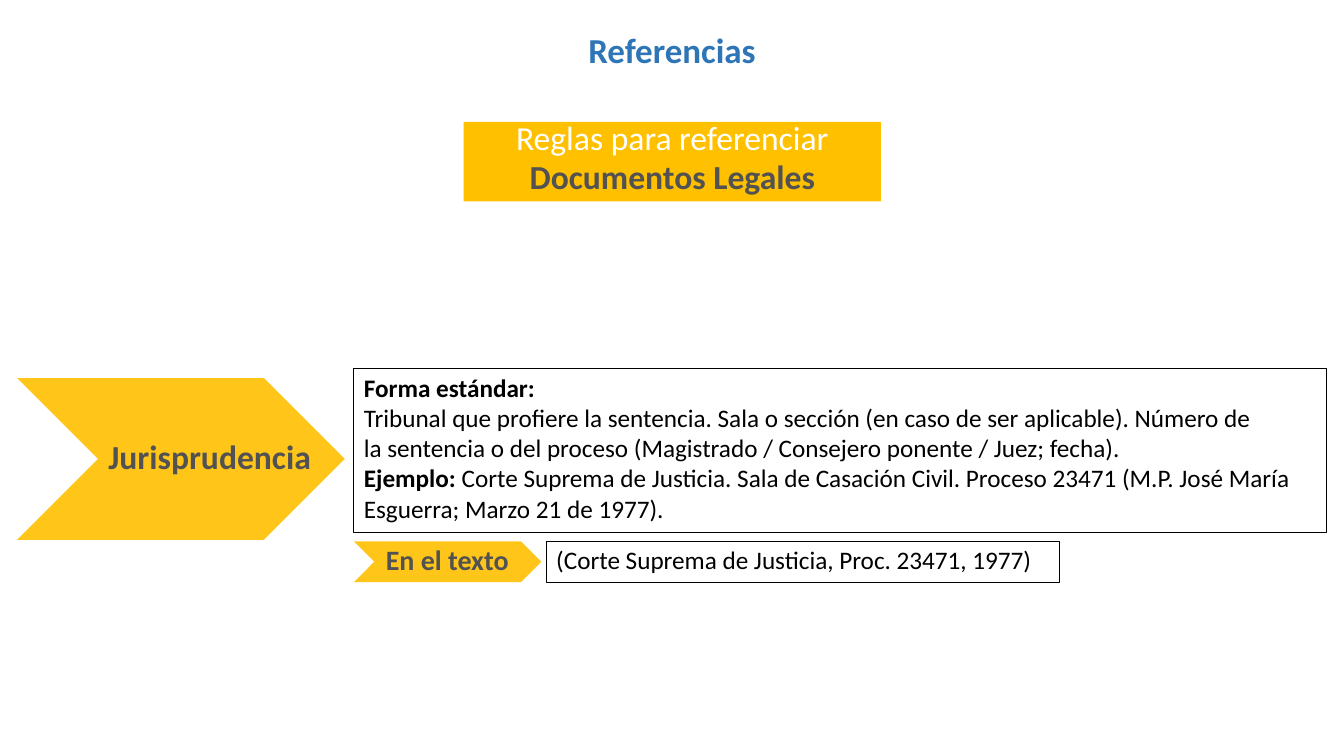
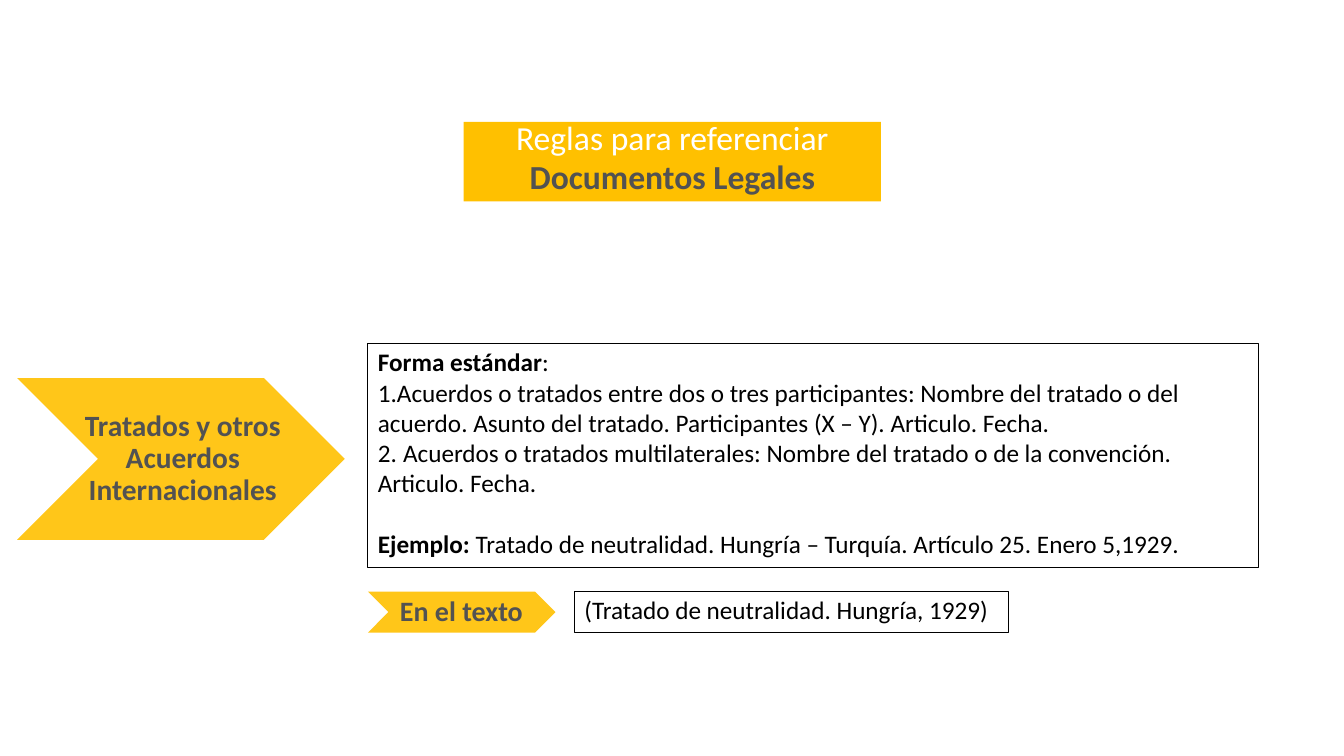
"""Build two slides on how to reference legal documents."""
from lxml import etree
from pptx import Presentation
from pptx import util as u
from pptx.dml.color import RGBColor
from pptx.enum import shapes, text
from pptx.oxml.ns import qn

COLORS = {"blue": "2D75B6", "gold": "FFC000", "gray": "525252",
          "black": "000000", "white": "FFFFFF"}
FONT = "Calibri"
INSET = u.Inches(0.1)
LABEL_WIDTH = 16
BAND_HEIGHT = 5.4

deck = Presentation()
deck.slide_width, deck.slide_height = u.Inches(13.33), u.Inches(7.5)
column, row = deck.slide_width / 100, deck.slide_height / 100


def place(page, kind, left, top, width, height, fill=None, line=None):
    """Add a plain shape, measured in columns and rows of a 100 by 100 grid."""
    box = page.shapes.add_shape(kind, int(left * column), int(top * row),
                                int(width * column), int(height * row))
    box.shadow.inherit = False
    if fill:
        box.fill.solid()
        box.fill.fore_color.rgb = RGBColor.from_string(COLORS[fill])
    else:
        box.fill.background()
    if line:
        box.line.color.rgb = RGBColor.from_string(COLORS[line])
        box.line.width = u.Pt(0.75)
    else:
        box.line.fill.background()
    return box


def write(box, paragraphs, size, color, align=text.PP_ALIGN.CENTER,
          anchor=text.MSO_ANCHOR.MIDDLE, side=0, top=0):
    """Fill a box with paragraphs of (text, bold) spans; return the paragraphs."""
    frame = box.text_frame
    frame.word_wrap = True
    frame.auto_size = text.MSO_AUTO_SIZE.NONE
    frame.vertical_anchor = anchor
    frame.margin_left, frame.margin_top = side, top
    frame.margin_right = frame.margin_bottom = 0
    for index, spans in enumerate(paragraphs):
        para = frame.paragraphs[0] if index == 0 else frame.add_paragraph()
        para.alignment = align
        para.font.name, para.font.size = FONT, u.Pt(size)
        para.font.color.rgb = RGBColor.from_string(COLORS[color])
        for words, bold in spans:
            if words == "\n":
                para.add_line_break()
                continue
            span = para.add_run()
            span.text, span.font.bold = words, bold
    return frame.paragraphs


topics = [
    {"title": "Referencias",
     "label": "Jurisprudencia", "label_size": 24, "label_center": 15.6,
     "left": 26.33, "rule": (48.8, 72.38, 21.6),
     "cite": (40.65, 71.6, 38.18),
     "paragraphs": [
         [("Forma estándar:", True)],
         [("Tribunal que profiere la sentencia. Sala o sección (en caso de ser "
           "aplicable). Número de", False)],
         [("la sentencia o del proceso (Magistrado / Consejero ponente / Juez; "
           "fecha).", False)],
         [("Ejemplo: ", True),
          ("Corte Suprema de Justicia. Sala de Casación Civil. Proceso 23471 "
           "(M.P. José María Esguerra; Marzo 21 de 1977).", False)]],
     "numbered": {}, "example_gap": 0,
     "cite_text": "(Corte Suprema de Justicia, Proc. 23471, 1977)"},
    {"title": None,
     "label": "Tratados y otros Acuerdos Internacionales", "label_size": 21,
     "label_center": 13.6,
     "left": 27.38, "rule": (45.47, 66.23, 29.6),
     "cite": (42.75, 78.27, 32.33),
     "paragraphs": [
         [("Forma estándar", True), (":", False)],
         [("Acuerdos o tratados entre dos o tres participantes: Nombre del "
           "tratado o del", False), ("\n", False),
          ("acuerdo. Asunto del tratado. Participantes (X – Y). Articulo. "
           "Fecha.", False)],
         [("Acuerdos o tratados multilaterales: Nombre del tratado o de la "
           "convención.", False)],
         [("Articulo. Fecha.", False)],
         [("Ejemplo: ", True),
          ("Tratado de neutralidad. Hungría – Turquía. Artículo 25. "
           "Enero 5,1929.", False)]],
     "numbered": {1: (0, -0.1), 2: (0.25, -0.25)}, "example_gap": 21.5,
     "cite_text": "(Tratado de neutralidad. Hungría, 1929)"},
]

for topic in topics:
    page = deck.slides.add_slide(deck.slide_layouts[5 if topic["title"] else 6])
    if topic["title"]:
        title = page.shapes.title
        title.left, title.top = int(40 * column), int(3.6 * row)
        title.width, title.height = int(20 * column), int(5.87 * row)
        write(title, [[(topic["title"], True)]], 25, "blue")

    banner = place(page, shapes.MSO_SHAPE.RECTANGLE, 34.5, 16.13, 31.05, 10.53,
                   fill="gold")
    lines = write(banner, [[("Reglas para referenciar", False)],
                           [("Documentos Legales", True)]],
                  24, "white", anchor=text.MSO_ANCHOR.TOP)
    lines[0].line_spacing, lines[1].line_spacing = u.Pt(25.4), u.Pt(27.4)
    lines[1].font.color.rgb = RGBColor.from_string(COLORS["gray"])

    left = topic["left"]
    cite_left, cite_top, cite_width = topic["cite"]
    arrows = [
        (1.28, 50, 24.38, 21.4, topic["label"], topic["label_size"],
         topic["label_center"]),
        (left, cite_top, 13.95, BAND_HEIGHT, "En el texto", 20, left + 6.95),
    ]
    for x, y, width, height, label, size, center in arrows:
        arrow = place(page, shapes.MSO_SHAPE.CHEVRON, x, y, width, height,
                      fill="gold")
        shade = arrow.fill._xPr.find(qn("a:solidFill"))[0]
        etree.SubElement(shade, qn("a:alpha"), val="90000")
        caption = page.shapes.add_textbox(
            int((center - LABEL_WIDTH / 2) * column), int(y * row),
            int(LABEL_WIDTH * column), int(height * row))
        write(caption, [[(label, True)]], size, "gray")[0].line_spacing = 0.9

    rule_top, rule_width, rule_height = topic["rule"]
    panels = [
        (left, rule_top, rule_width, rule_height, topic["paragraphs"]),
        (cite_left, cite_top, cite_width, BAND_HEIGHT,
         [[(topic["cite_text"], False)]]),
    ]
    for x, y, width, height, paragraphs in panels:
        panel = place(page, shapes.MSO_SHAPE.RECTANGLE, x, y, width, height,
                      line="black")
        lines = write(panel, paragraphs, 18, "black", text.PP_ALIGN.LEFT,
                      text.MSO_ANCHOR.TOP, INSET, u.Inches(0.03))
        lines[0].space_before = u.Pt(2.5)
        if len(lines) > 1:
            lines[-1].space_before = u.Pt(topic["example_gap"])
            for index, (margin, indent) in topic["numbered"].items():
                settings = lines[index]._p.get_or_add_pPr()
                settings.set("marL", str(u.Inches(margin)))
                settings.set("indent", str(u.Inches(indent)))
                number = etree.Element(qn("a:buAutoNum"), type="arabicPeriod",
                                       startAt=str(index))
                settings.find(qn("a:defRPr")).addprevious(number)

deck.save("out.pptx")
